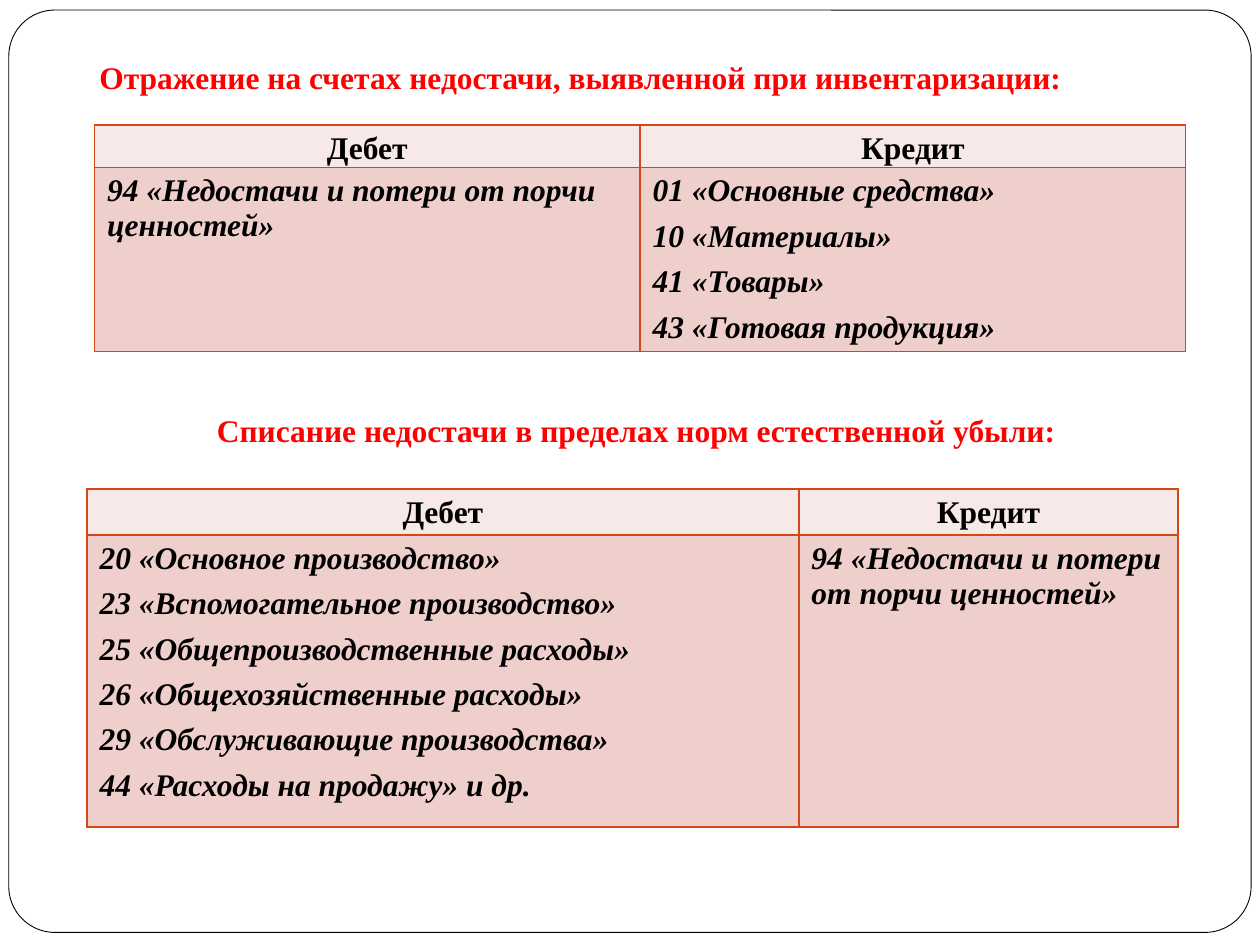
from pptx import Presentation
from pptx.dml.color import RGBColor
from pptx.enum.shapes import MSO_SHAPE
from pptx.enum.text import MSO_AUTO_SIZE, PP_ALIGN
from pptx.oxml import parse_xml
from pptx.oxml.ns import nsdecls
from pptx.util import Inches, Pt

ROUNDED = MSO_SHAPE.ROUNDED_RECTANGLE
LEFT, CENTER = PP_ALIGN.LEFT, PP_ALIGN.CENTER
GROW = MSO_AUTO_SIZE.SHAPE_TO_FIT_TEXT

COLORS = {
    "paper": "FFFFFF",
    "ink": "000000",
    "heading": "FF0000",
    "border": "D34817",
    "header": "F7E9E8",
    "body": "EFCFCC",
}
FONT = "Times New Roman"
COLUMNS, ROWS = 100, 75  # square grid units over the slide
HEADERS = ["Дебет", "Кредит"]
LOSSES = ["94 «Недостачи и потери от порчи ценностей»"]
ASSETS = [
    "01 «Основные средства»",
    "10 «Материалы»",
    "41 «Товары»",
    "43 «Готовая продукция»",
]
EXPENSES = [
    "20 «Основное производство»",
    "23 «Вспомогательное производство»",
    "25 «Общепроизводственные расходы»",
    "26 «Общехозяйственные расходы»",
    "29 «Обслуживающие производства»",
    "44 «Расходы на продажу» и др.",
]


def color(name):
    return RGBColor.from_string(COLORS[name])


def write_text(frame, lines, ink="ink", size=18, italic=False, align=LEFT,
               before=0, line_spacing=None):
    for index, line in enumerate(lines):
        paragraph = frame.add_paragraph() if index else frame.paragraphs[0]
        paragraph.alignment = align
        paragraph.space_before = Pt(before)
        if line_spacing:
            paragraph.line_spacing = line_spacing
        run = paragraph.add_run()
        run.text = line
        run.font.name = FONT
        run.font.size = Pt(size)
        run.font.bold = True
        run.font.italic = italic
        run.font.color.rgb = color(ink)


class SlideBuilder:
    def __init__(self, presentation):
        self.slide = presentation.slides.add_slide(presentation.slide_layouts[6])
        self.unit = presentation.slide_width / COLUMNS

    def lengths(self, *units):
        return [round(value * self.unit) for value in units]

    def frame(self, left, top, width, height):
        shape = self.slide.shapes.add_shape(
            ROUNDED, *self.lengths(left, top, width, height))
        shape.adjustments[0] = 0.05
        shape.shadow.inherit = False
        shape.fill.solid()
        shape.fill.fore_color.rgb = color("paper")
        shape.line.color.rgb = color("ink")
        shape.line.width = Pt(0.5)

    def heading(self, text, top, align=LEFT):
        box = self.slide.shapes.add_textbox(*self.lengths(6.9, top, 87.2, 4))
        box.text_frame.word_wrap = True
        box.text_frame.auto_size = GROW
        write_text(box.text_frame, [text], ink="heading", align=align)

    def style_cell(self, cell, fill):
        cell.fill.solid()
        cell.fill.fore_color.rgb = color(fill)
        properties = cell._tc.get_or_add_tcPr()
        for index, side in enumerate(("lnL", "lnR", "lnT", "lnB")):
            properties.insert(index, parse_xml(
                f'<a:{side} {nsdecls("a")} w="{Pt(1)}"><a:solidFill>'
                f'<a:srgbClr val="{COLORS["border"]}"/>'
                f'</a:solidFill></a:{side}>'))

    def account_table(self, left, top, widths, heights, entries, header_before=0):
        """Draw a debit and credit table with a header row and one body row."""
        table = self.slide.shapes.add_table(
            2, 2, *self.lengths(left, top, sum(widths), sum(heights))).table
        for column, width in zip(table.columns, self.lengths(*widths)):
            column.width = width
        for row, height in zip(table.rows, self.lengths(*heights)):
            row.height = height
        for index, (header, lines) in enumerate(zip(HEADERS, entries)):
            header_cell, body_cell = table.cell(0, index), table.cell(1, index)
            header_cell.margin_left = header_cell.margin_right = Inches(0.01)
            header_cell.margin_top = header_cell.margin_bottom = Inches(0.01)
            write_text(header_cell.text_frame, [header], align=CENTER,
                       before=header_before, line_spacing=1.15)
            write_text(body_cell.text_frame, lines, italic=True, before=6)
            self.style_cell(header_cell, "header")
            self.style_cell(body_cell, "body")


def main():
    presentation = Presentation()
    presentation.slide_width = Inches(10)
    presentation.slide_height = Inches(10 * ROWS / COLUMNS)
    builder = SlideBuilder(presentation)
    builder.frame(0.7, 0.8, 98.6, 73.2)
    builder.account_table(7.5, 9.9, [43.3, 43.3], [3.4, 14.5], [LOSSES, ASSETS])
    builder.heading(
        "Отражение на счетах недостачи, выявленной при инвентаризации:", 4.1)
    builder.heading(
        "Списание недостачи в пределах норм естественной убыли:", 32.1, CENTER)
    builder.account_table(6.9, 38.8, [56.5, 30.1], [3.6, 23.2],
                          [EXPENSES, LOSSES], header_before=6)
    presentation.save("out.pptx")


if __name__ == "__main__":
    main()
